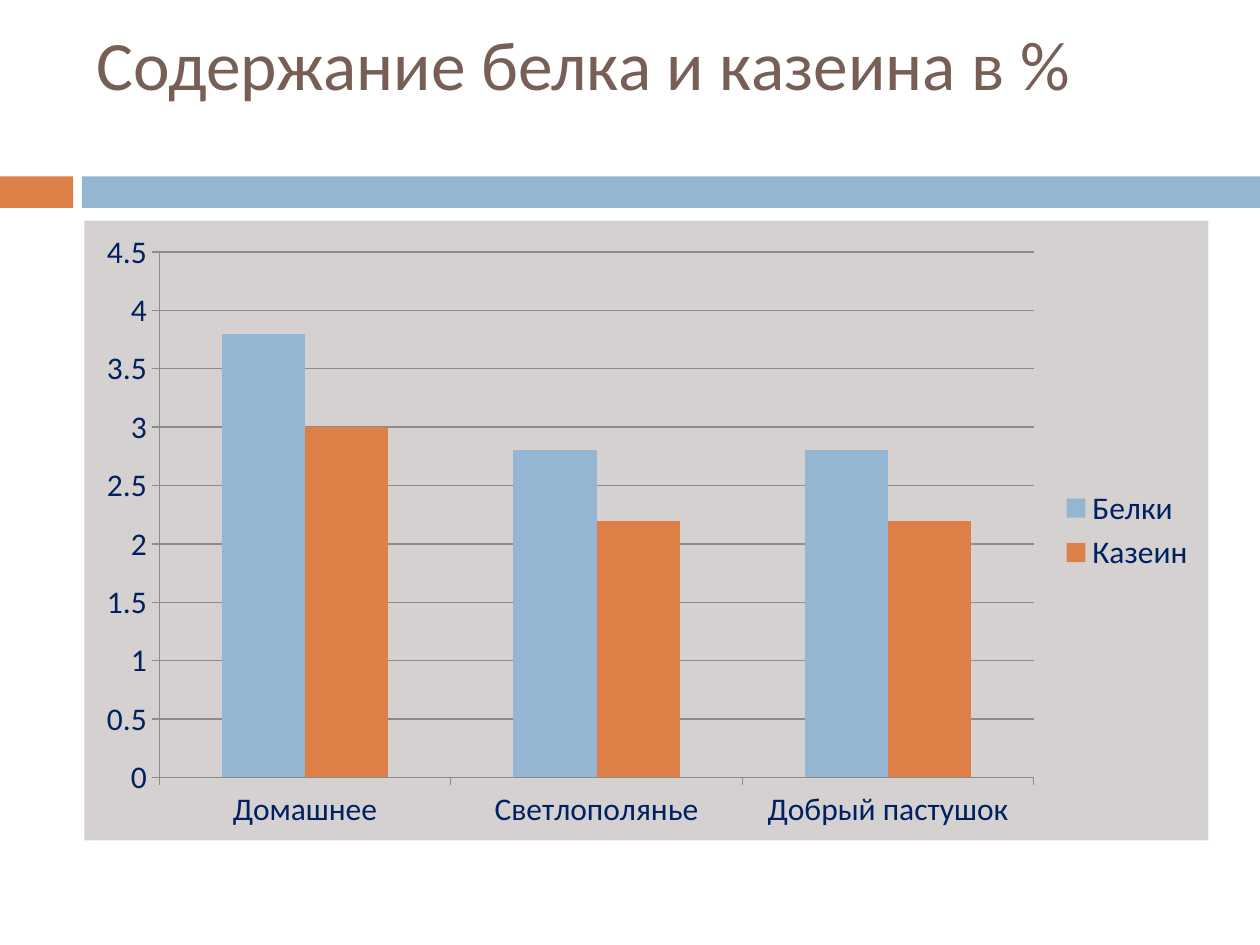
import pptx
import pptx.util
import pptx.chart.data
import pptx.dml.color
import pptx.enum.chart
import pptx.enum.shapes
import pptx.enum.text

TITLE = "Содержание белка и казеина в %"
CATEGORIES = ["Домашнее", "Светлополянье", "Добрый пастушок"]
SERIES = [
    ("Белки", [3.8, 2.8, 2.8], "blue"),
    ("Казеин", [3, 2.2, 2.2], "orange"),
]
COLORS = {
    "blue": "94B6D2",
    "orange": "DD8047",
    "brown": "775F55",
    "navy": "002060",
    "panel": "D5D1D1",
    "line": "8B8B8B",
}
FONT = "Calibri"
WIDTH, HEIGHT = 10, 7.5
LEFT, CONTENT_WIDTH = 0.67, 8.92
BANDS = [(0, 0.58, "orange"), (0.65, WIDTH - 0.65, "blue")]
BAND_TOP, BAND_HEIGHT = 1.4, 0.25

inch = pptx.util.Inches


def rgb(name):
    return pptx.dml.color.RGBColor.from_string(COLORS[name])


def paint(fill, color):
    fill.solid()
    fill.fore_color.rgb = rgb(color)


def style_font(font, size, color):
    font.name = FONT
    font.size = pptx.util.Pt(size)
    font.color.rgb = rgb(color)


def add_text(slide, text, *, box, size, color, bottom=0.05):
    tf = slide.shapes.add_textbox(*map(inch, box)).text_frame
    tf.word_wrap = True
    tf.vertical_anchor = pptx.enum.text.MSO_ANCHOR.MIDDLE
    tf.margin_top, tf.margin_bottom = 0, inch(bottom)
    r = tf.paragraphs[0].add_run()
    r.text = text
    style_font(r.font, size, color)


def add_band(slide, left, width, color):
    sp = slide.shapes.add_shape(
        pptx.enum.shapes.MSO_SHAPE.RECTANGLE,
        *map(inch, (left, BAND_TOP, width, BAND_HEIGHT)))
    sp.shadow.inherit = False
    paint(sp.fill, color)
    sp.line.fill.background()


def fill_chart_area(chart, color):
    ns = "http://schemas.openxmlformats.org/drawingml/2006/main"
    props = pptx.oxml.parse_xml(
        '<c:spPr xmlns:c="http://schemas.openxmlformats.org/drawingml/2006/chart" '
        f'xmlns:a="{ns}"><a:solidFill><a:srgbClr val="{COLORS[color]}"/></a:solidFill>'
        '<a:ln><a:noFill/></a:ln></c:spPr>')
    chart.element.chart.addnext(props)


def add_column_chart(slide):
    data = pptx.chart.data.CategoryChartData()
    data.categories = CATEGORIES
    for name, values, _ in SERIES:
        data.add_series(name, values)
    chart = slide.shapes.add_chart(
        pptx.enum.chart.XL_CHART_TYPE.COLUMN_CLUSTERED,
        *map(inch, (LEFT, 1.75, CONTENT_WIDTH, 4.92)), data).chart
    style_font(chart.font, 18, "navy")
    fill_chart_area(chart, "panel")
    chart.has_title = False
    chart.has_legend = True
    chart.legend.position = pptx.enum.chart.XL_LEGEND_POSITION.RIGHT
    chart.legend.include_in_layout = False
    plot = chart.plots[0]
    plot.gap_width, plot.overlap = 150, 0
    plot.vary_by_categories = False
    for series, (_, _, color) in zip(plot.series, SERIES):
        paint(series.format.fill, color)
    value_axis = chart.value_axis
    value_axis.minimum_scale, value_axis.maximum_scale = 0, 4.5
    value_axis.major_unit = 0.5
    value_axis.has_major_gridlines = True
    lines = [value_axis.major_gridlines.format.line]
    for axis in (chart.category_axis, value_axis):
        axis.major_tick_mark = pptx.enum.chart.XL_TICK_MARK.OUTSIDE
        lines.append(axis.format.line)
    for line in lines:
        line.color.rgb = rgb("line")
        line.width = pptx.util.Pt(0.75)


def main():
    prs = pptx.Presentation()
    prs.slide_width, prs.slide_height = inch(WIDTH), inch(HEIGHT)
    slide = prs.slides.add_slide(prs.slide_layouts[6])
    for band in BANDS:
        add_band(slide, *band)
    add_text(slide, TITLE, box=(LEFT, 0.25, CONTENT_WIDTH, 1.08),
             size=39.6, color="brown", bottom=0.59)
    add_column_chart(slide)
    prs.save("out.pptx")


if __name__ == "__main__":
    main()
